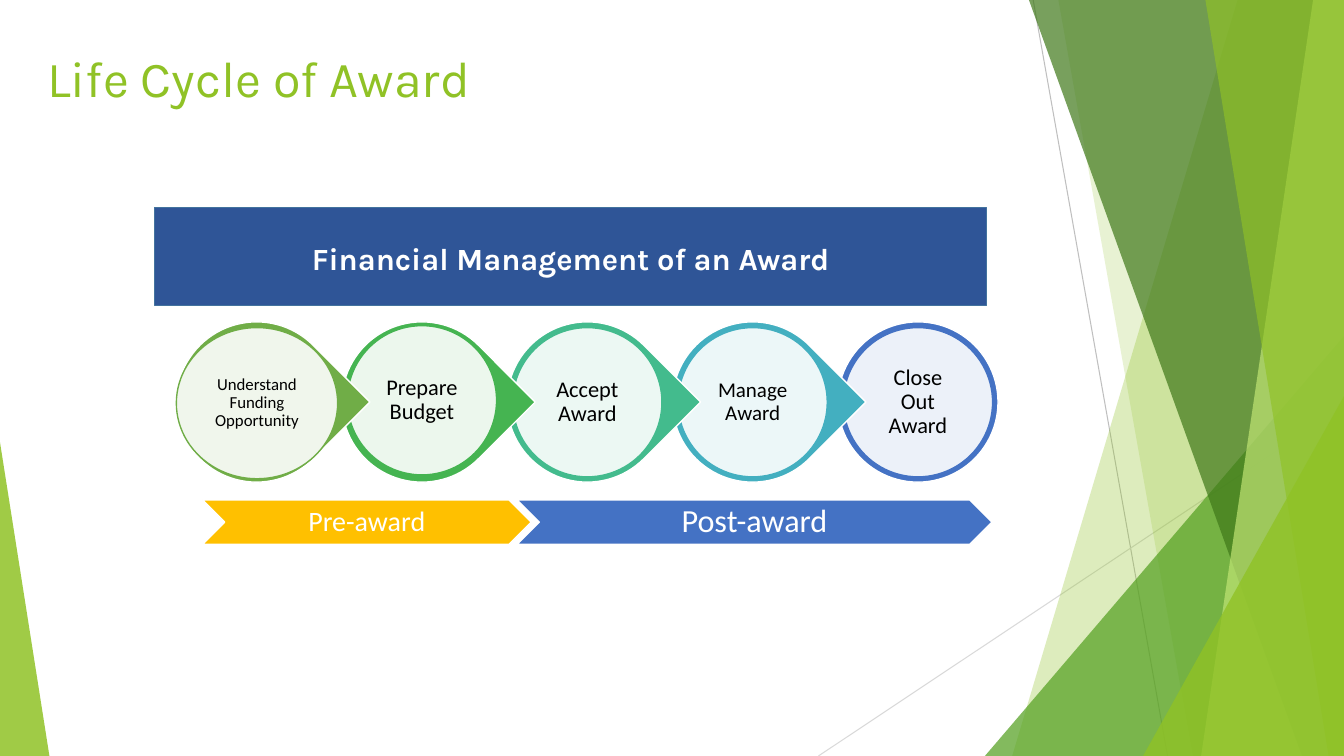
import pptx
import pptx.dml.color
import pptx.enum.shapes
import pptx.enum.text
import pptx.oxml
import pptx.oxml.ns
import pptx.util
from lxml import etree

Pt = pptx.util.Pt
SHAPE = pptx.enum.shapes.MSO_SHAPE
ALIGN = pptx.enum.text.PP_ALIGN
ANCHOR = pptx.enum.text.MSO_ANCHOR
WIDTH, HEIGHT = 960, 540

# Guide lines: start x, start y, end x, end y, colour
GUIDES = [
    (738, 0, 834, HEIGHT, "BFBFBF"),
    (WIDTH, 290, 584.6, HEIGHT, "D9D9D9"),
]
# Facets, back to front. Band: top x, bottom x. Triangle: left, top, width, apex.
FACETS = [
    ("band", (884.2, 723), "90C226", 30),
    ("band", (756, 851.8), "90C226", 20),
    ("triangle", (703.5, 240, 256.5, 1), "54A021", 72),
    ("band", (735, 929.5), "3F7819", 70),
    ("band", (938.2, 858.2), "C0E474", 70),
    ("band", (861, 949), "90C226", 65),
    ("triangle", (816.5, 283, 143.5, 1), "90C226", 80),
    ("triangle", (0, 316, 35.3, 0), "90C226", 85),
]

HEADING = "Life Cycle of Award"
BANNER = "Financial Management of an Award"

# Stages: text, size, colour, disc (left offset, top, width, height)
STAGES = [
    ("Understand Funding Opportunity", 12, "70AD47", (0, 234, 115.2, 108)),
    ("Prepare Budget", 16, "45B451", (4, 232.6, 106.6, 106.6)),
    ("Accept Award", 16, "43BB8D", (4, 234, 106.6, 106.6)),
    ("Manage Award", 15, "43AFC0", (4, 234, 106.6, 106.6)),
    ("Close Out Award", 16, "4472C4", (4, 234, 106.6, 106.6)),
]
STAGE_LEFT, STAGE_TOP, STAGE_STEP, STAGE_SIZE = 126, 229.9, 118.1, 114.5

# Phases: text, size, colour, left, width
PHASES = [
    ("Pre-award", 20, "FFC000", 144.7, 234.7),
    ("Post-award", 23, "4472C4", 369.4, 339.1),
]
PHASE_TOP, PHASE_HEIGHT = 357.1, 31.7


def rgb(hex_colour):
    return pptx.dml.color.RGBColor.from_string(hex_colour)


def apply(target, values):
    for name, value in values.items():
        setattr(target, name, value)


def paint(shape, fill, line=None, opacity=100):
    """Set fill, opacity in percent and a 1 pt outline, without shadow."""
    shape.shadow.inherit = False
    shape.fill.solid()
    shape.fill.fore_color.rgb = rgb(fill)
    if opacity < 100:
        colour = shape.fill._xPr.find(".//" + pptx.oxml.ns.qn("a:srgbClr"))
        alpha = etree.SubElement(colour, pptx.oxml.ns.qn("a:alpha"))
        alpha.set("val", str(opacity * 1000))
    if line:
        shape.line.color.rgb = rgb(line)
        shape.line.width = Pt(1)
    else:
        shape.line.fill.background()


def add_preset(slide, preset, left, top, width, height):
    return slide.shapes.add_shape(preset, Pt(left), Pt(top), Pt(width), Pt(height))


def write(shape, text, font, paragraph, inset, anchor=ANCHOR.MIDDLE):
    """Fill a shape with one formatted paragraph; inset is (x, y)."""
    across, down = (Pt(value) for value in inset)
    frame = shape.text_frame
    apply(frame, {
        "text": text, "word_wrap": True, "vertical_anchor": anchor,
        "auto_size": pptx.enum.text.MSO_AUTO_SIZE.NONE,
        "margin_left": across, "margin_right": across,
        "margin_top": down, "margin_bottom": down,
    })
    apply(frame.paragraphs[0], paragraph)
    name, size, colour, bold = font
    run_font = frame.paragraphs[0].runs[0].font
    apply(run_font, {"name": name, "size": Pt(size), "bold": bold})
    run_font.color.rgb = rgb(colour)


def add_backdrop(slide):
    for x1, y1, x2, y2, colour in GUIDES:
        guide = slide.shapes.add_connector(
            pptx.enum.shapes.MSO_CONNECTOR.STRAIGHT, Pt(x1), Pt(y1), Pt(x2), Pt(y2))
        guide.line.color.rgb = rgb(colour)
        guide.line.width = Pt(0.75)
        etree.SubElement(guide._element.spPr, pptx.oxml.ns.qn("a:effectLst"))
    for kind, place, colour, opacity in FACETS:
        if kind == "band":
            top_x, bottom_x = place
            outline = slide.shapes.build_freeform(top_x, 0, scale=Pt(1))
            outline.add_line_segments(
                [(WIDTH, 0), (WIDTH, HEIGHT), (bottom_x, HEIGHT)], close=True)
            facet = outline.convert_to_shape()
        else:
            left, top, width, apex = place
            facet = add_preset(slide, SHAPE.ISOSCELES_TRIANGLE,
                               left, top, width, HEIGHT - top)
            facet.adjustments[0] = apex
        paint(facet, colour, opacity=opacity)


def add_stages(slide):
    """Draw the stages from last to first, so each point overlaps the next."""
    centred = {"alignment": ALIGN.CENTER, "line_spacing": 0.9}
    last = len(STAGES) - 1
    for index in range(last, -1, -1):
        text, size, colour, (offset, top, width, height) = STAGES[index]
        left = STAGE_LEFT + index * STAGE_STEP
        ring = add_preset(slide, SHAPE.OVAL if index == last else SHAPE.TEAR,
                          left, STAGE_TOP, STAGE_SIZE, STAGE_SIZE)
        ring.rotation = 0 if index == last else 45
        paint(ring, colour, "FFFFFF")
        disc = add_preset(slide, SHAPE.OVAL, left + offset, top, width, height)
        paint(disc, "FFFFFF", colour, 90)
        write(disc, text, ("Calibri", size, "000000", False), centred, (10, 10))


def add_phases(slide):
    centred = {"alignment": ALIGN.CENTER, "line_spacing": 0.9}
    for text, size, colour, left, width in PHASES:
        phase = add_preset(slide, SHAPE.CHEVRON, left, PHASE_TOP, width, PHASE_HEIGHT)
        paint(phase, colour, "FFFFFF")
        write(phase, text, ("Calibri", size, "FFFFFF", False), centred, (2, 2))


def main():
    deck = pptx.Presentation()
    apply(deck, {"slide_width": Pt(WIDTH), "slide_height": Pt(HEIGHT)})
    slide = deck.slides.add_slide(deck.slide_layouts[5])
    add_backdrop(slide)

    heading = slide.shapes.title
    apply(heading, {"left": Pt(26.6), "top": Pt(30.2),
                    "width": Pt(676.8), "height": Pt(59)})
    write(heading, HEADING, ("Karla", 36, "90C226", False),
          {"alignment": ALIGN.LEFT}, (7.2, 3.6), ANCHOR.TOP)

    banner = add_preset(slide, SHAPE.RECTANGLE, 110.2, 148.3, 594.7, 69.8)
    paint(banner, "2F5597", "43739E")
    write(banner, BANNER, ("Karla", 22, "FFFFFF", True),
          {"alignment": ALIGN.CENTER, "line_spacing": 1.07, "space_after": Pt(8)},
          (7.2, 3.6))

    add_stages(slide)
    add_phases(slide)
    deck.save("out.pptx")


if __name__ == "__main__":
    main()
